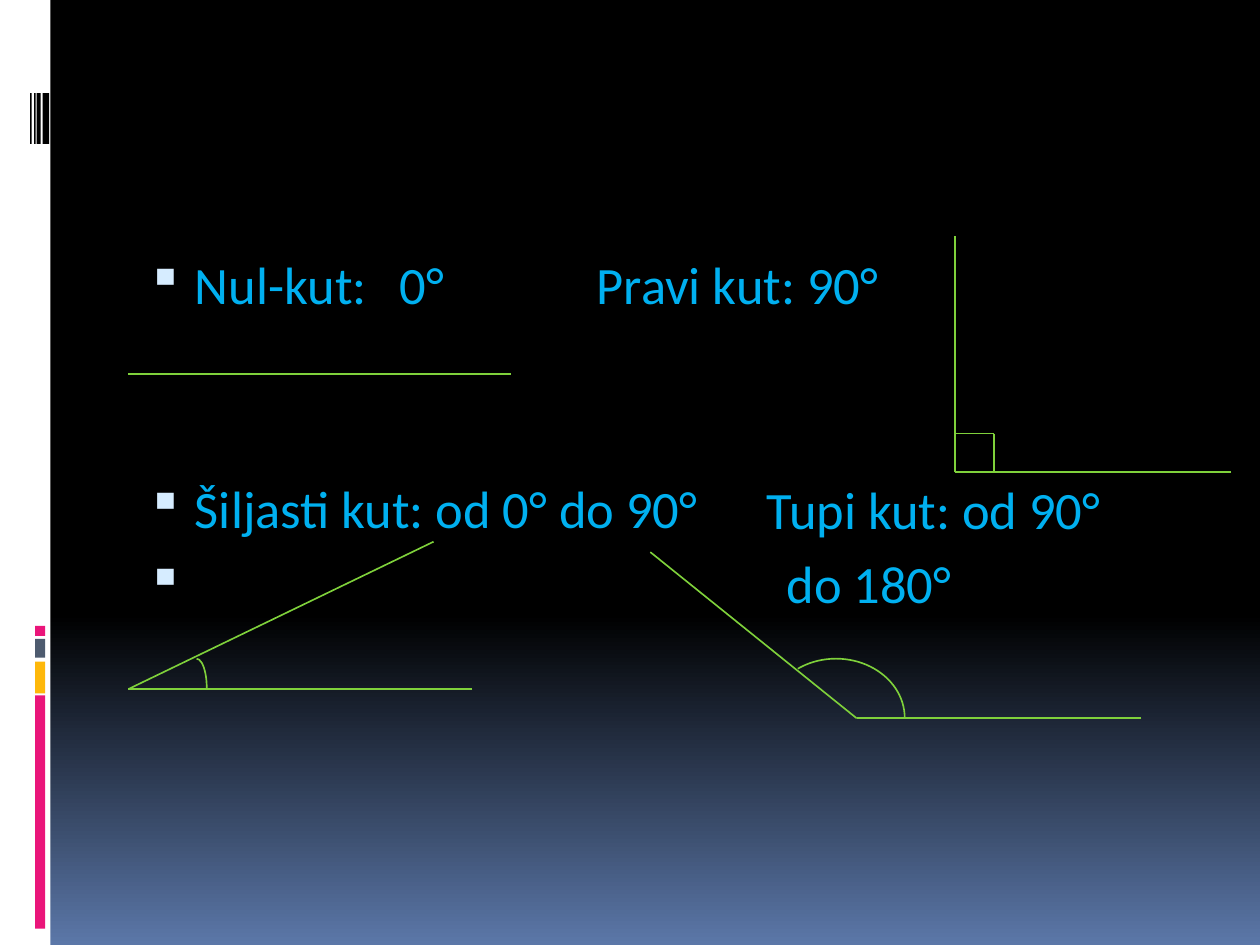
from lxml.etree import SubElement
from pptx import Presentation
from pptx.dml.color import RGBColor
from pptx.enum.shapes import MSO_CONNECTOR as CONN, MSO_SHAPE as SHAPE
from pptx.oxml.ns import qn
from pptx.util import Cm, Pt

BLACK = RGBColor(0, 0, 0)
WHITE = RGBColor(0xFF, 0xFF, 0xFF)
HORIZON = RGBColor(0x5B, 0x77, 0xA8)
PINK = RGBColor(0xEA, 0x15, 0x7A)
AMBER = RGBColor(0xFE, 0xB8, 0x0A)
SLATE = RGBColor(0x4E, 0x5B, 0x6F)
GREEN = RGBColor(0x7F, 0xD1, 0x3B)
CYAN = RGBColor(0x00, 0xB0, 0xF0)
BULLET = "D6ECFF"

BULLET_LEFT = 0.17
TEXT_LEFT = 1.14
ROW_1, ROW_2 = 4.95, 9.49

STRIPES = [
    (0, 0, 1.02, 19.05, WHITE),
    (0.71, 14.02, 0.2, 4.7, PINK),
    (0.71, 13.34, 0.2, 0.64, AMBER),
    (0.71, 12.88, 0.2, 0.38, SLATE),
    (0.71, 12.62, 0.2, 0.2, PINK),
]
BARCODE = [(0.86, 0.13), (0.74, 0.08), (0.69, 0.03), (0.61, 0.03)]

ZERO_ANGLE = [(2.59, 7.54), (10.31, 7.54)]
ACUTE_ANGLE = [(9.52, 13.89), (2.59, 13.89), (8.74, 10.92)]
RIGHT_ANGLE = [(24.82, 9.52), (19.25, 9.52), (19.25, 4.75)]
RIGHT_MARK = [(19.25, 8.74), (20.04, 8.74), (20.04, 9.52)]
OBTUSE_ANGLE = [(23.01, 14.48), (17.27, 14.48), (13.11, 11.13)]


def add_background(s):
    fill = s.background.fill
    fill.gradient()
    fill.gradient_angle = 270
    for stop, pos, color in zip(fill.gradient_stops, (0.65, 1), (BLACK, HORIZON)):
        stop.position = pos
        stop.color.rgb = color


def add_bar(s, left, top, width, height, color):
    sp = s.shapes.add_shape(SHAPE.RECTANGLE, Cm(left), Cm(top), Cm(width), Cm(height))
    sp.shadow.inherit = False
    sp.fill.solid()
    sp.fill.fore_color.rgb = color
    sp.line.fill.background()


def style_line(line):
    line.color.rgb = GREEN
    line.width = Pt(0.94)


def add_path(s, points):
    for (x1, y1), (x2, y2) in zip(points, points[1:]):
        c = s.shapes.add_connector(CONN.STRAIGHT, Cm(x1), Cm(y1), Cm(x2), Cm(y2))
        style_line(c.line)
        SubElement(c.element.spPr, qn("a:effectLst"))


def add_arc(s, left, top, width, height, start=None):
    sp = s.shapes.add_shape(SHAPE.ARC, Cm(left), Cm(top), Cm(width), Cm(height))
    sp.shadow.inherit = False
    sp.fill.background()
    style_line(sp.line)
    if start is not None:
        sp.adjustments[0] = start


def add_box(s, left, top, width, height, inset=0.25, wrap=True):
    tf = s.shapes.add_textbox(Cm(left), Cm(top), Cm(width), Cm(height)).text_frame
    tf.word_wrap = wrap
    tf.margin_left = tf.margin_right = Cm(inset)
    return tf


def write(p, text, before=7, indent=None):
    p.space_before = Pt(before)
    r = p.add_run()
    r.text = text
    r.font.name = "Calibri"
    r.font.size = Pt(30)
    r.font.color.rgb = CYAN
    if indent is not None:
        pPr = p._p.get_or_add_pPr()
        pPr.set("marL", str(Cm(indent)))
        pPr.set("indent", str(Cm(BULLET_LEFT - indent)))
        SubElement(SubElement(pPr, qn("a:buClr")), qn("a:srgbClr"), val=BULLET)
        SubElement(pPr, qn("a:buSzPct"), val="95000")
        SubElement(pPr, qn("a:buChar"), char="▪")


def add_label(s, text, left, top, width):
    write(add_box(s, left, top, width, 1.6, inset=0, wrap=False).paragraphs[0], text)


def add_bullets(s):
    tf = add_box(s, 2.54, ROW_1, 21.59, 12.7)
    write(tf.paragraphs[0], "Nul-kut:", indent=TEXT_LEFT)
    write(tf.add_paragraph(), "Šiljasti kut: od 0° do 90°", before=92, indent=TEXT_LEFT)
    write(tf.add_paragraph(), "do 180°", indent=13.07)


def main():
    """Build the slide on kinds of angles."""
    prs = Presentation()
    prs.slide_width, prs.slide_height = Cm(25.4), Cm(19.05)
    s = prs.slides.add_slide(prs.slide_layouts[6])
    add_background(s)
    for stripe in STRIPES:
        add_bar(s, *stripe)
    for left, width in BARCODE:
        add_bar(s, left, 1.88, width, 1.02, BLACK)
    add_bullets(s)
    add_label(s, "0°", 8.06, ROW_1, 1.2)
    add_label(s, "Pravi kut: 90°", 12.03, ROW_1, 6)
    add_label(s, "Tupi kut: od 90°", 15.46, ROW_2, 7)
    for points in (ZERO_ANGLE, ACUTE_ANGLE, RIGHT_ANGLE, RIGHT_MARK, OBTUSE_ANGLE):
        add_path(s, points)
    add_arc(s, 3.76, 13.28, 0.41, 1.19)
    add_arc(s, 15.47, 13.28, 2.77, 2.39, start=139.32)
    prs.save("out.pptx")


if __name__ == "__main__":
    main()
